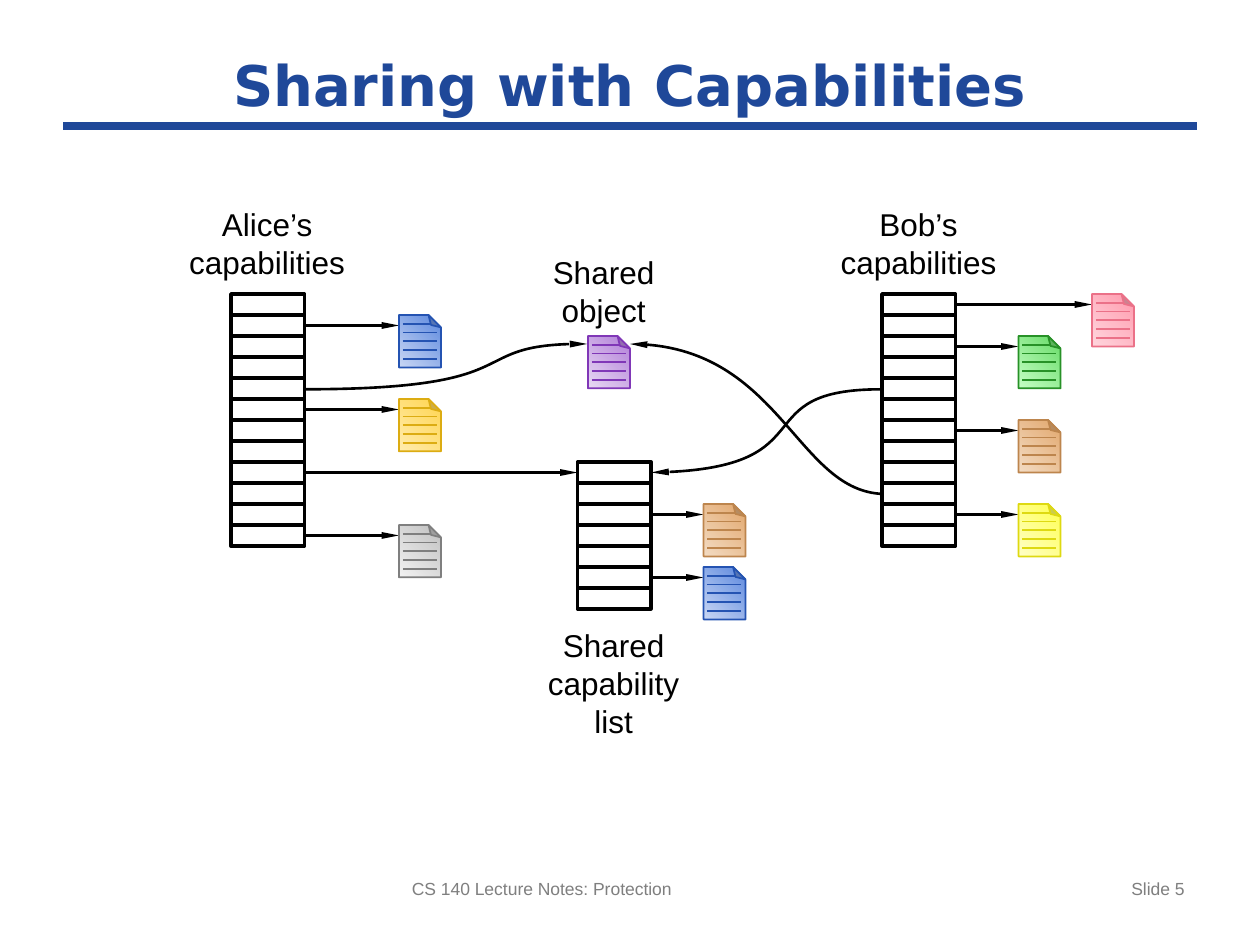
from lxml import etree
from pptx import Presentation
from pptx import util as u
from pptx.dml.color import RGBColor
from pptx.enum import shapes, text
from pptx.oxml import ns

TITLE_BLUE = RGBColor(0x1F, 0x48, 0x99)
FOOTER_GRAY = RGBColor(0x7F, 0x7F, 0x7F)
BLACK = RGBColor(0x00, 0x00, 0x00)
WHITE = RGBColor(0xFF, 0xFF, 0xFF)

GRAY = (RGBColor(0xF2, 0xF2, 0xF2), RGBColor(0xC0, 0xC0, 0xC0), RGBColor(0x7F, 0x7F, 0x7F))
GOLD = (RGBColor(0xFF, 0xEC, 0xAF), RGBColor(0xFF, 0xD5, 0x4F), RGBColor(0xDC, 0xAC, 0x12))
GREEN = (RGBColor(0xC5, 0xFF, 0xC5), RGBColor(0x67, 0xDB, 0x67), RGBColor(0x27, 0x91, 0x27))
BLUE = (RGBColor(0xC9, 0xD7, 0xF4), RGBColor(0x5C, 0x88, 0xDE), RGBColor(0x24, 0x53, 0xB2))
YELLOW = (RGBColor(0xFF, 0xFF, 0xC9), RGBColor(0xFF, 0xFF, 0x4F), RGBColor(0xDE, 0xD9, 0x11))
PINK = (RGBColor(0xFF, 0xD5, 0xDD), RGBColor(0xFF, 0x9B, 0xAE), RGBColor(0xEB, 0x71, 0x88))
TAN = (RGBColor(0xF3, 0xDC, 0xC4), RGBColor(0xE2, 0xA7, 0x6C), RGBColor(0xBD, 0x85, 0x4D))
PURPLE = (RGBColor(0xE8, 0xD9, 0xF3), RGBColor(0xB1, 0x7E, 0xD8), RGBColor(0x80, 0x37, 0xB7))

ROW = 1 / 6
LIST_WIDTH = 3.5 * ROW
ICON_WIDTH, ICON_HEIGHT = 2 * ROW, 2.5 * ROW


class Diagram:
    body_font = "Arial"
    title_font = "DejaVu Sans"

    def __init__(self, slide):
        self.slide = slide

    def set_font(self, paragraph, size, color, name=body_font):
        paragraph.font.name = name
        paragraph.font.size = u.Pt(size)
        paragraph.font.color.rgb = color

    def title(self, words, left, top, width, height):
        shape = self.slide.shapes.title
        shape.left, shape.top = u.Inches(left), u.Inches(top)
        shape.width, shape.height = u.Inches(width), u.Inches(height)
        frame = shape.text_frame
        frame.text = words
        frame.vertical_anchor = text.MSO_ANCHOR.MIDDLE
        paragraph = frame.paragraphs[0]
        paragraph.alignment = text.PP_ALIGN.CENTER
        self.set_font(paragraph, 32, TITLE_BLUE, self.title_font)
        paragraph.font.bold = True

    def text_box(self, words, left, top, width, height, size, color, alignment):
        box = self.slide.shapes.add_textbox(
            u.Inches(left), u.Inches(top), u.Inches(width), u.Inches(height))
        box.text_frame.word_wrap = True
        paragraph = box.text_frame.paragraphs[0]
        paragraph.text = words
        paragraph.alignment = alignment
        self.set_font(paragraph, size, color)
        return paragraph

    def label(self, words, left, top, height=0.71):
        paragraph = self.text_box(
            words, left, top, 1.58, height, 18, BLACK, text.PP_ALIGN.CENTER)
        paragraph.line_spacing = u.Pt(21.6)

    def footer(self, words, left, width, alignment):
        self.text_box(words, left, 6.92, width, 0.43, 10, FOOTER_GRAY, alignment)

    def line(self, x1, y1, x2, y2, color, width, container=None):
        connector = (container or self.slide).shapes.add_connector(
            shapes.MSO_CONNECTOR.STRAIGHT,
            u.Inches(x1), u.Inches(y1), u.Inches(x2), u.Inches(y2))
        connector.line.color.rgb = color
        connector.line.width = u.Pt(width)
        etree.SubElement(connector._element.spPr, ns.qn("a:effectLst"))
        return connector

    def arrowhead(self, shape):
        properties = shape.line._get_or_add_ln()
        etree.SubElement(
            properties, ns.qn("a:tailEnd"), type="triangle", w="sm", len="lg")

    def arrow(self, x1, x2, y):
        self.arrowhead(self.line(x1, y, x2, y, BLACK, 1.5))

    def curve(self, start, *points):
        builder = self.slide.shapes.build_freeform(
            u.Inches(start[0]), u.Inches(start[1]))
        builder.add_line_segments(
            [(u.Inches(x), u.Inches(y)) for x, y in points], close=False)
        shape = builder.convert_to_shape()
        segments = list(shape._element.iter(ns.qn("a:lnTo")))
        bezier = etree.SubElement(segments[0].getparent(), ns.qn("a:cubicBezTo"))
        for segment in segments:
            bezier.append(segment[0])
            segment.getparent().remove(segment)
        shape.shadow.inherit = False
        shape.fill.background()
        shape.line.color.rgb = BLACK
        shape.line.width = u.Pt(1.5)
        self.arrowhead(shape)

    def capability_list(self, left, top, rows):
        box = self.slide.shapes.add_shape(
            shapes.MSO_SHAPE.RECTANGLE, u.Inches(left), u.Inches(top),
            u.Inches(LIST_WIDTH), u.Inches(rows * ROW))
        box.shadow.inherit = False
        box.fill.solid()
        box.fill.fore_color.rgb = WHITE
        box.line.color.rgb = BLACK
        box.line.width = u.Pt(2)
        for row in range(1, rows):
            y = top + row * ROW
            divider = self.line(left, y, left + LIST_WIDTH, y, BLACK, 2)
            if 2 * row == rows:
                divider.begin_connect(box, 1)
                divider.end_connect(box, 3)

    def document(self, left, top, colors):
        light, dark, outline = colors
        group = self.slide.shapes.add_group_shape()
        page = group.shapes.add_shape(
            shapes.MSO_SHAPE.FOLDED_CORNER, u.Inches(left), u.Inches(top),
            u.Inches(ICON_WIDTH), u.Inches(ICON_HEIGHT))
        properties = page._element.spPr
        properties.xfrm.set("flipV", "1")
        for adjustments in properties.iter(ns.qn("a:avLst")):
            etree.SubElement(adjustments, ns.qn("a:gd"), name="adj", fmla="val 29700")
        page.shadow.inherit = False
        page.fill.gradient()
        page.fill.gradient_angle = 315
        for stop, color in zip(page.fill.gradient_stops, (light, dark)):
            stop.color.rgb = color
        page.line.color.rgb = outline
        page.line.width = u.Pt(1)
        for number in range(1, 6):
            y = top + number * ICON_HEIGHT / 6
            right = left + (0.25 if number == 1 else 0.3)
            self.line(left + 0.03, y, right, y, outline, 1, group)

    def entry(self, list_left, list_top, row, icon_left, colors):
        top = list_top + row * ROW
        self.arrow(list_left + LIST_WIDTH, icon_left, top + ROW / 2)
        self.document(icon_left, top, colors)


def main():
    presentation = Presentation()
    presentation.slide_width = u.Inches(10)
    presentation.slide_height = u.Inches(7.5)
    diagram = Diagram(presentation.slides.add_slide(presentation.slide_layouts[5]))

    diagram.title("Sharing with Capabilities", 0.5, 0.33, 9, 0.67)
    diagram.line(0.5, 1, 9.5, 1, TITLE_BLUE, 4.5)
    diagram.footer("CS 140 Lecture Notes: Protection", 3.17, 3.75, text.PP_ALIGN.LEFT)
    diagram.footer("Slide 5", 7.17, 2.33, text.PP_ALIGN.RIGHT)

    alice, bob, shared = 11 * ROW, 42 * ROW, 27.5 * ROW
    people_top, shared_top = 14 * ROW, 22 * ROW
    near_alice, near_bob, far_bob, near_shared = 19 * ROW, 48.5 * ROW, 52 * ROW, 33.5 * ROW
    lists = [
        (alice, people_top, 12, [(1, near_alice, BLUE), (5, near_alice, GOLD),
                                 (11, near_alice, GRAY)]),
        (bob, people_top, 12, [(0, far_bob, PINK), (2, near_bob, GREEN),
                               (6, near_bob, TAN), (10, near_bob, YELLOW)]),
        (shared, shared_top, 7, [(2, near_shared, TAN), (5, near_shared, BLUE)]),
    ]
    for left, top, rows, entries in lists:
        diagram.capability_list(left, top, rows)
        for row, icon_left, colors in entries:
            diagram.entry(left, top, row, icon_left, colors)

    diagram.document(28 * ROW, 16 * ROW, PURPLE)
    diagram.arrow(alice + LIST_WIDTH, shared, shared_top + ROW / 2)
    diagram.curve((6.99, 3.09), (5.91, 3.09), (6.61, 3.73), (5.17, 3.75))
    diagram.curve((2.42, 3.09), (4.2, 3.09), (3.64, 2.72), (4.66, 2.73))
    diagram.curve((7.01, 3.92), (6.34, 3.9), (6.19, 2.73), (5, 2.73))

    diagram.label("Alice’s\vcapabilities", 1.33, 1.58)
    diagram.label("Bob’s\vcapabilities", 6.5, 1.58)
    diagram.label("Shared object", 4, 1.96)
    diagram.label("Shared capability list", 4.08, 4.92, 1.01)

    presentation.save("out.pptx")


if __name__ == "__main__":
    main()
